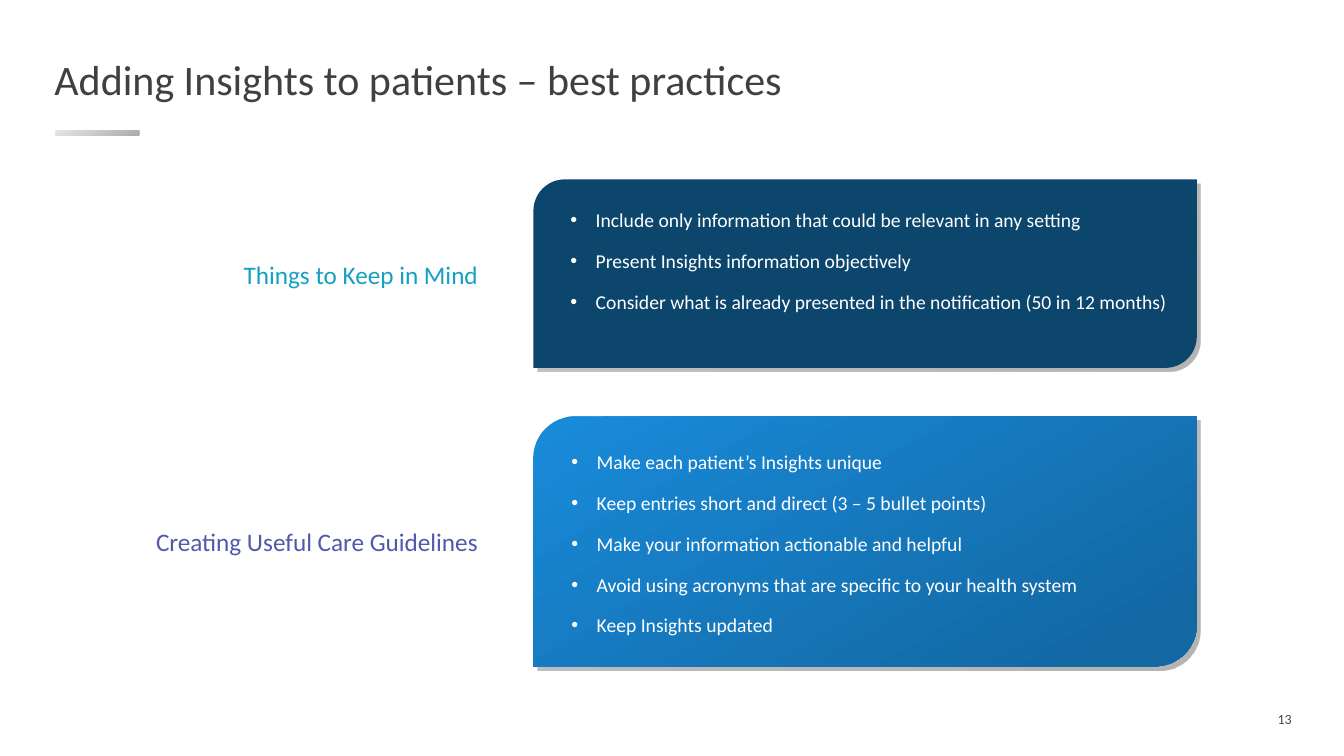
from lxml.etree import SubElement
from pptx import Presentation
from pptx.dml.color import RGBColor
from pptx.enum.shapes import MSO_SHAPE
from pptx.enum.text import MSO_ANCHOR, MSO_AUTO_SIZE, PP_ALIGN
from pptx.oxml.ns import qn
from pptx.util import Inches, Pt

WHITE = RGBColor(0xFF, 0xFF, 0xFF)
TITLE_GREY = RGBColor(0x40, 0x40, 0x41)
NUMBER_GREY = RGBColor(0x47, 0x47, 0x47)
TEAL = RGBColor(0x14, 0xA0, 0xC0)
INDIGO = RGBColor(0x50, 0x59, 0xAB)
NAVY = RGBColor(0x0C, 0x46, 0x6D)
BLUES = RGBColor(0x19, 0x8B, 0xDA), RGBColor(0x13, 0x68, 0xA3)
SHADOW_GREYS = RGBColor(0x58, 0x59, 0x5B), RGBColor(0x2C, 0x2C, 0x2D)
BAR_GREYS = RGBColor(0xE7, 0xE6, 0xE6), RGBColor(0xAF, 0xAB, 0xAB)

PANEL_LEFT, PANEL_WIDTH = 5.29, 6.58
SHADOW_OFFSET = 0.04
LABEL_RIGHT, LABEL_HEIGHT = 4.84, 0.4

# label, label colour, label top and width, panel top and height, panel colours,
# text left, top and height, text anchor, bullets
SECTIONS = [
    ("Things to Keep in Mind", TEAL, 2.52, 2.56, 1.78, 1.87, [NAVY],
     5.5, 1.98, 1.65, MSO_ANCHOR.TOP,
     ["Include only information that could be relevant in any setting",
      "Present Insights information objectively",
      "Consider what is already presented in the notification (50 in 12 months)"]),
    ("Creating Useful Care Guidelines", INDIGO, 5.17, 3.44, 4.13, 2.48, BLUES,
     5.51, 4.33, 2.09, MSO_ANCHOR.MIDDLE,
     ["Make each patient’s Insights unique",
      "Keep entries short and direct (3 – 5 bullet points)",
      "Make your information actionable and helpful",
      "Avoid using acronyms that are specific to your health system",
      "Keep Insights updated"]),
]


def add_block(kind, left, top, width, height, colors, last_stop=0.9, alpha=None):
    """Add a borderless shape, solid for one colour and graded for two."""
    sp = slide.shapes.add_shape(kind, Inches(left), Inches(top), Inches(width), Inches(height))
    sp.shadow.inherit = False
    sp.line.fill.background()
    if len(colors) == 1:
        sp.fill.solid()
        sp.fill.fore_color.rgb = colors[0]
        return
    sp.fill.gradient()
    sp.fill.gradient_angle = 300
    for stop, color, position in zip(sp.fill.gradient_stops, colors, (0, last_stop)):
        stop.color.rgb = color
        stop.position = position
    if alpha:
        for clr in sp.element.spPr.iter(qn("a:srgbClr")):
            SubElement(clr, qn("a:alpha"), val=str(alpha * 1000))


def add_run(p, text, size, color):
    r = p.add_run()
    r.text = text
    r.font.name = "Calibri"
    r.font.size = Pt(size)
    r.font.color.rgb = color


prs = Presentation()
prs.slide_width = Inches(13.33)
prs.slide_height = Inches(7.5)
slide = prs.slides.add_slide(prs.slide_layouts[5])

# Title and accent bar
title = slide.shapes.title
title.left, title.top = Inches(0.44), Inches(0.52)
title.width, title.height = Inches(12.46), Inches(0.58)
tf = title.text_frame
tf.auto_size = MSO_AUTO_SIZE.NONE
tf.vertical_anchor = MSO_ANCHOR.MIDDLE
tf.margin_top = tf.margin_bottom = 0
p = tf.paragraphs[0]
p.alignment = PP_ALIGN.LEFT
p.line_spacing = 0.9
p.space_before = Pt(10)
add_run(p, "Adding Insights to patients – best practices", 30, TITLE_GREY)
add_block(MSO_SHAPE.RECTANGLE, 0.55, 1.29, 0.83, 0.05, BAR_GREYS, last_stop=1)

# Labelled panels
for (label, label_color, label_top, label_width, top, height, colors,
     text_left, text_top, text_height, anchor, bullets) in SECTIONS:
    add_block(MSO_SHAPE.ROUND_2_DIAG_RECTANGLE, PANEL_LEFT + SHADOW_OFFSET,
              top + SHADOW_OFFSET, PANEL_WIDTH, height, SHADOW_GREYS, alpha=35)
    add_block(MSO_SHAPE.ROUND_2_DIAG_RECTANGLE, PANEL_LEFT, top, PANEL_WIDTH, height, colors)

    tf = slide.shapes.add_textbox(Inches(text_left), Inches(text_top),
                                  Inches(6.22), Inches(text_height)).text_frame
    tf.word_wrap = True
    tf.vertical_anchor = anchor
    for i, bullet in enumerate(bullets):
        p = tf.add_paragraph() if i else tf.paragraphs[0]
        p.line_spacing = 1.14
        p.space_before = Pt(10)
        pPr = p._p.get_or_add_pPr()
        pPr.set("marL", str(Inches(0.31)))
        pPr.set("indent", str(Inches(-0.25)))
        SubElement(pPr, qn("a:buFont"), typeface="Arial")
        SubElement(pPr, qn("a:buChar"), char="•")
        add_run(p, bullet, 14, WHITE)

    tf = slide.shapes.add_textbox(Inches(LABEL_RIGHT - label_width), Inches(label_top),
                                  Inches(label_width), Inches(LABEL_HEIGHT)).text_frame
    tf.word_wrap = False
    tf.auto_size = MSO_AUTO_SIZE.SHAPE_TO_FIT_TEXT
    p = tf.paragraphs[0]
    p.alignment = PP_ALIGN.RIGHT
    add_run(p, label, 18, label_color)

# Page number
tf = slide.shapes.add_textbox(Inches(9.42), Inches(7.05), Inches(3.49), Inches(0.16)).text_frame
tf.word_wrap = True
tf.vertical_anchor = MSO_ANCHOR.MIDDLE
p = tf.paragraphs[0]
p.alignment = PP_ALIGN.RIGHT
add_run(p, "13", 10, NUMBER_GREY)

prs.save("out.pptx")
